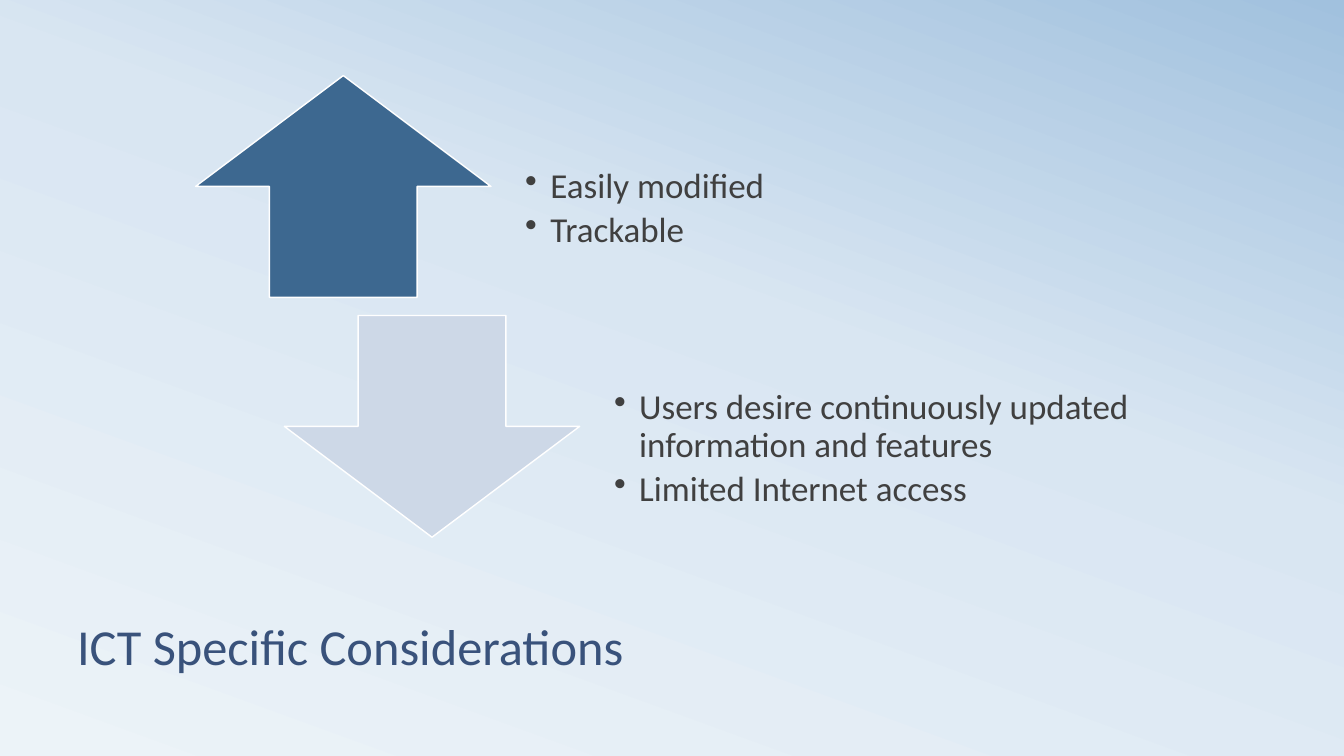
"""Build the slide that weighs ICT considerations with an up and a down arrow."""
import copy
from dataclasses import dataclass

import lxml.etree
import pptx
import pptx.dml.color
import pptx.enum.shapes
import pptx.enum.text
import pptx.oxml.ns
import pptx.util

COLORS = {
    "sky_low": "ECF3F8",
    "sky_middle": "D9E6F2",
    "sky_high": "A1C1DE",
    "up": "3D6890",
    "down": "CDD8E7",
    "edge": "FFFFFF",
    "title": "39527B",
    "body": "404040",
}
SKY_STOPS = {"sky_low": 0, "sky_middle": 0.58, "sky_high": 1}
FONT = "Calibri"
WIDTH, HEIGHT = 13.33, 7.5
GRID_LEFT, GRID_TOP = 1.94, 0.75
COLUMN_STEP, ROW_STEP = 0.88, 2.38
ARROW_WIDTH, ROW_HEIGHT = 2.93, 2.2
TEXT_OFFSET, TEXT_WIDTH = 3.02, 6.3
INDENT = 0.25
TEXT_TOP_INSET = 0.7


@dataclass(frozen=True)
class Consideration:
    """One arrow with its bullet points."""

    arrow: pptx.enum.shapes.MSO_SHAPE
    color: str
    points: tuple[str, ...]


CONSIDERATIONS = (
    Consideration(
        pptx.enum.shapes.MSO_SHAPE.UP_ARROW, "up", ("Easily modified", "Trackable")
    ),
    Consideration(
        pptx.enum.shapes.MSO_SHAPE.DOWN_ARROW,
        "down",
        (
            "Users desire continuously updated information and features",
            "Limited Internet access",
        ),
    ),
)


def rgb(name: str) -> pptx.dml.color.RGBColor:
    """Look up a named colour."""
    return pptx.dml.color.RGBColor.from_string(COLORS[name])


def inches(*lengths: float) -> list[pptx.util.Length]:
    """Convert lengths in inches."""
    return [pptx.util.Inches(length) for length in lengths]


def paint_sky(page) -> None:
    """Fill the background with a slanted three-stop gradient."""
    fill = page.background.fill
    fill.gradient()
    fill.gradient_angle = 70
    stop_list = page._element.find(".//" + pptx.oxml.ns.qn("a:gsLst"))
    stop_list.append(copy.deepcopy(stop_list[-1]))
    for stop, (name, position) in zip(fill.gradient_stops, SKY_STOPS.items()):
        stop.color.rgb = rgb(name)
        stop.position = position


def add_text(page, place: tuple, lines: tuple, size: float, color: str,
             spacing: float, anchor: pptx.enum.text.MSO_ANCHOR):
    """Add a wrapping text box with one paragraph per line."""
    frame = page.shapes.add_textbox(*inches(*place)).text_frame
    frame.word_wrap = True
    frame.vertical_anchor = anchor
    frame.text = "\n".join(lines)
    for para in frame.paragraphs:
        para.line_spacing = spacing
        para.font.name = FONT
        para.font.size = pptx.util.Pt(size)
        para.font.color.rgb = rgb(color)
    return frame


def add_bullet(para) -> None:
    """Give a paragraph a hanging bullet and space below."""
    para.space_after = pptx.util.Pt(4.5)
    properties = para._p.get_or_add_pPr()
    indent = pptx.util.Inches(INDENT)
    properties.set("marL", str(indent))
    properties.set("indent", str(-indent))
    bullet = lxml.etree.Element(pptx.oxml.ns.qn("a:buChar"), char="•")
    properties.find(pptx.oxml.ns.qn("a:defRPr")).addprevious(bullet)


def add_consideration(page, step: int, item: Consideration) -> None:
    """Draw one arrow and its points on the stepped grid."""
    left = GRID_LEFT + step * COLUMN_STEP
    top = GRID_TOP + step * ROW_STEP
    arrow = page.shapes.add_shape(
        item.arrow, *inches(left, top, ARROW_WIDTH, ROW_HEIGHT)
    )
    arrow.shadow.inherit = False
    arrow.fill.solid()
    arrow.fill.fore_color.rgb = rgb(item.color)
    arrow.line.color.rgb = rgb("edge")
    arrow.line.width = pptx.util.Pt(1)
    place = (left + TEXT_OFFSET, top, TEXT_WIDTH, ROW_HEIGHT)
    frame = add_text(page, place, item.points, 25, "body", 0.9,
                     pptx.enum.text.MSO_ANCHOR.MIDDLE)
    frame.margin_left = frame.margin_right = pptx.util.Inches(INDENT)
    frame.margin_bottom = pptx.util.Inches(INDENT)
    frame.margin_top = pptx.util.Inches(TEXT_TOP_INSET)
    for para in frame.paragraphs:
        add_bullet(para)


def main() -> None:
    """Build and save the deck."""
    deck = pptx.Presentation()
    deck.slide_width, deck.slide_height = inches(WIDTH, HEIGHT)
    page = deck.slides.add_slide(deck.slide_layouts[6])
    paint_sky(page)
    add_text(page, (0.05 * WIDTH, 5.58, 0.9 * WIDTH, 1.17),
             ("ICT Specific Considerations",), 36, "title", 0.8,
             pptx.enum.text.MSO_ANCHOR.BOTTOM)
    for step, item in enumerate(CONSIDERATIONS):
        add_consideration(page, step, item)
    deck.save("out.pptx")


if __name__ == "__main__":
    main()
